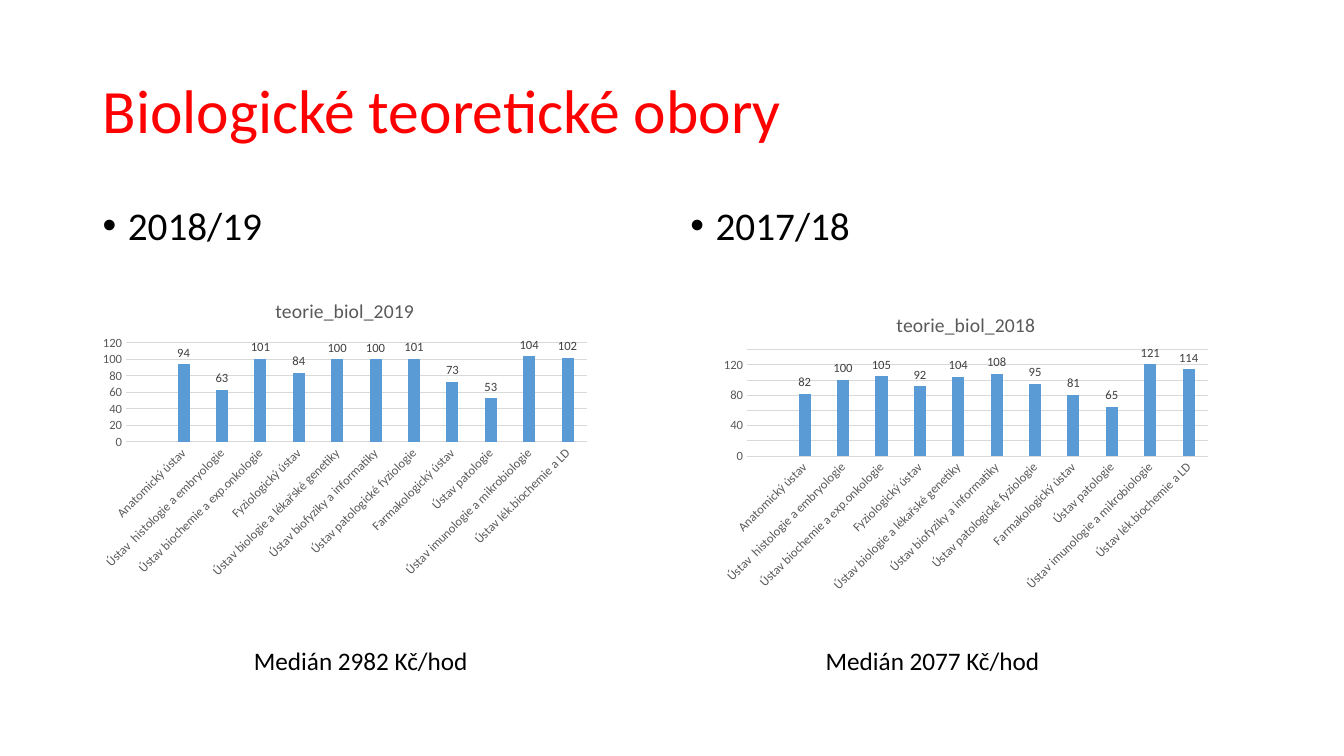
import pptx
import pptx.chart.data
import pptx.dml.color
import pptx.enum.chart
import pptx.enum.text
import pptx.oxml
import pptx.oxml.ns
import pptx.util
from pptx.util import Inches, Pt

RED = pptx.dml.color.RGBColor(0xFF, 0x00, 0x00)
BLACK = pptx.dml.color.RGBColor(0x00, 0x00, 0x00)
BLUE = pptx.dml.color.RGBColor(0x5B, 0x9B, 0xD5)
DARK_GREY = pptx.dml.color.RGBColor(0x40, 0x40, 0x40)
GREY = pptx.dml.color.RGBColor(0x59, 0x59, 0x59)
LIGHT_GREY = pptx.dml.color.RGBColor(0xD9, 0xD9, 0xD9)
FONT = "Calibri"

INSTITUTES = [
    "",
    "Anatomický ústav",
    "Ústav  histologie a embryologie",
    "Ústav biochemie a exp.onkologie",
    "Fyziologický ústav",
    "Ústav biologie a lékařské genetiky",
    "Ústav biofyziky a informatiky",
    "Ústav patologické fyziologie",
    "Farmakologický ústav",
    "Ústav patologie",
    "Ústav imunologie a mikrobiologie",
    "Ústav lék.biochemie a LD",
]
VALUES_2019 = [None, 94, 63, 101, 84, 100, 100, 101, 73, 53, 104, 102]
VALUES_2018 = [None, 82, 100, 105, 92, 104, 108, 95, 81, 65, 121, 114]


def style_font(font, size, color):
    font.name = FONT
    font.size = Pt(size)
    font.bold = False
    font.color.rgb = color


def add_text(slide, text, left, top, width, height, size, color=BLACK, wrap=True):
    box = slide.shapes.add_textbox(Inches(left), Inches(top), Inches(width), Inches(height))
    box.text_frame.text = text
    box.text_frame.word_wrap = wrap
    style_font(box.text_frame.paragraphs[0].runs[0].font, size, color)
    return box.text_frame


def add_title(slide, text):
    frame = add_text(slide, text, 0.92, 0.4, 11.5, 1.45, 44, RED)
    frame.vertical_anchor = pptx.enum.text.MSO_ANCHOR.MIDDLE
    frame.paragraphs[0].line_spacing = 0.9


def add_bullet(slide, text, left):
    paragraph = add_text(slide, text, left, 2, 5.67, 4.76, 28).paragraphs[0]
    paragraph.line_spacing = 0.9
    paragraph.space_before = Pt(10)
    properties = paragraph._p.get_or_add_pPr()
    properties.set("marL", str(Inches(0.25)))
    properties.set("indent", str(-Inches(0.25)))
    namespace = pptx.oxml.ns.nsdecls("a")
    for xml in (f'<a:buFont {namespace} typeface="Arial"/>', f'<a:buChar {namespace} char="•"/>'):
        properties.append(pptx.oxml.parse_xml(xml))


def style_axes(chart, maximum):
    for axis in (chart.category_axis, chart.value_axis):
        axis.major_tick_mark = pptx.enum.chart.XL_TICK_MARK.NONE
        axis.minor_tick_mark = pptx.enum.chart.XL_TICK_MARK.NONE
        style_font(axis.tick_labels.font, 9, GREY)

    category_axis = chart.category_axis
    category_line = category_axis.format.line
    value_axis = chart.value_axis
    grid_line = value_axis.major_gridlines.format.line
    for line in (category_line, grid_line):
        line.color.rgb = LIGHT_GREY
        line.width = Pt(0.75)
    label_body = category_axis._element.txPr.find(pptx.oxml.ns.qn("a:bodyPr"))
    label_body.set("rot", str(-45 * 60000))
    label_body.set("vert", "horz")

    value_axis.format.line.fill.background()
    value_axis.minimum_scale = 0
    value_axis.maximum_scale = maximum
    value_axis.major_unit = 20
    value_axis.tick_labels.number_format = "#,##0"
    value_axis.tick_labels.number_format_is_linked = False


def add_column_chart(slide, title, values, left, top, maximum):
    data = pptx.chart.data.CategoryChartData()
    data.categories = INSTITUTES
    data.add_series("Series 1", values)
    chart = slide.shapes.add_chart(
        pptx.enum.chart.XL_CHART_TYPE.COLUMN_CLUSTERED,
        Inches(left), Inches(top), Inches(5), Inches(3), data,
    ).chart
    style_font(chart.font, 10, BLACK)
    chart.has_legend = False
    chart.has_title = True
    chart.chart_title.include_in_layout = False
    title_frame = chart.chart_title.text_frame
    title_frame.text = title
    style_font(title_frame.paragraphs[0].runs[0].font, 14, GREY)
    style_axes(chart, maximum)

    plot = chart.plots[0]
    plot.vary_by_categories = False
    plot.gap_width = 219
    plot.overlap = -27
    columns = plot.series[0]
    columns.format.fill.solid()
    columns.format.fill.fore_color.rgb = BLUE
    labels = columns.data_labels
    labels.show_value = True
    labels.position = pptx.enum.chart.XL_LABEL_POSITION.OUTSIDE_END
    labels.number_format = "#,##0"
    labels.number_format_is_linked = False
    style_font(labels.font, 9, DARK_GREY)


def main():
    presentation = pptx.Presentation()
    presentation.slide_width = Inches(13.33)
    presentation.slide_height = Inches(7.5)
    slide = presentation.slides.add_slide(presentation.slide_layouts[6])

    add_title(slide, "Biologické teoretické obory")
    add_bullet(slide, "2018/19", 0.92)
    add_bullet(slide, "2017/18", 6.75)
    add_column_chart(slide, "teorie_biol_2019", VALUES_2019, 0.92, 2.8, 120)
    add_column_chart(slide, "teorie_biol_2018", VALUES_2018, 7.08, 2.94, 140)
    add_text(slide, "Medián 2982 Kč/hod", 2.42, 6.35, 2.41, 0.4, 18, wrap=False)
    add_text(slide, "Medián 2077 Kč/hod", 8.09, 6.35, 2.41, 0.4, 18, wrap=False)

    presentation.save("out.pptx")


if __name__ == "__main__":
    main()
